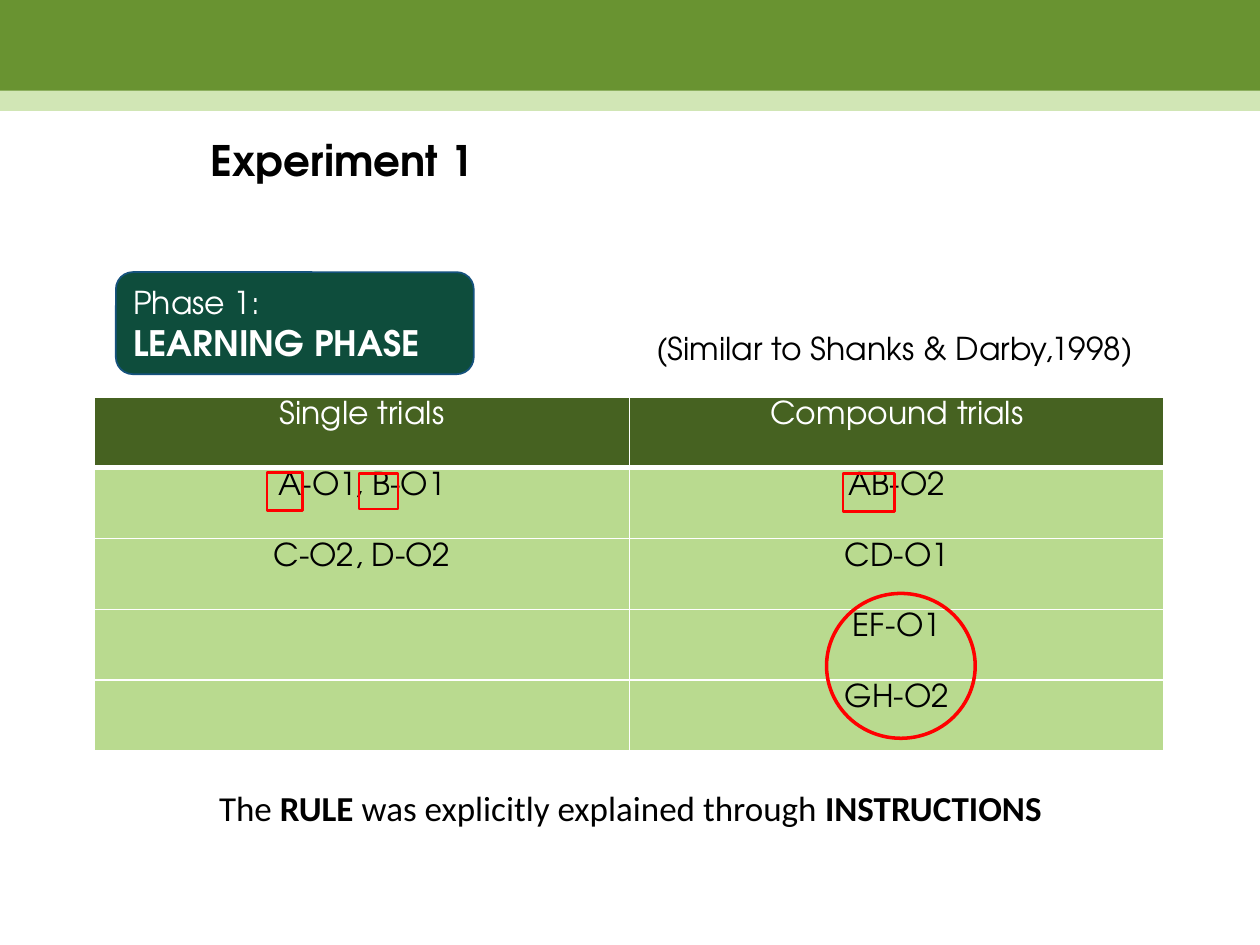
from pptx import Presentation
from pptx.dml.color import RGBColor
from pptx.enum.shapes import MSO_SHAPE
from pptx.enum.text import MSO_ANCHOR, PP_ALIGN
from pptx.oxml import parse_xml
from pptx.oxml.ns import nsdecls
from pptx.util import Inches, Pt

THEME = {
    "face": "TeX Gyre Adventor", "plain": "Calibri",
    "black": "000000", "white": "FFFFFF", "red": "FF0000",
    "band": "699331", "pale": "D1E6B5", "head": "466221", "cell": "B9DA8F",
    "badge": "0E4D3C", "edge": "15527D",
    "title": 24, "large": 20, "body": 18,
}

TITLE = [[("Experiment 1", "title", True)]]
PHASE = [[("Phase 1:", "body", False)], [("LEARNING PHASE", "large", True)]]
SOURCE = [[("(Similar to Shanks & Darby,1998)", "body", False)]]
RULE = [[
    ("The ", "large", False), ("RULE ", "large", True),
    ("was explicitly explained through ", "large", False),
    ("INSTRUCTIONS", "large", True),
]]
TRIALS = [
    ("Single trials", "Compound trials"),
    ("A-O1, B-O1", "AB-O2"),
    ("C-O2, D-O2", "CD-O1"),
    ("", "EF-O1"),
    ("", "GH-O2"),
]
GRID = (0.75, 3.15, 8.49, 2.81)
MARKS = [
    (MSO_SHAPE.RECTANGLE, (2.12, 3.75, 0.28, 0.3), 1.5),
    (MSO_SHAPE.RECTANGLE, (2.85, 3.76, 0.31, 0.28), 1.5),
    (MSO_SHAPE.RECTANGLE, (6.69, 3.76, 0.41, 0.3), 1.5),
    (MSO_SHAPE.OVAL, (6.56, 4.71, 1.18, 1.15), 2),
]
BANDS = [((0, 0, 10, 0.87), "band"), ((0, 0.72, 10, 0.16), "pale")]


def tint(name):
    return RGBColor.from_string(THEME[name])


def apply(item, form):
    for key, value in form.items():
        setattr(item, key, value)


def write(frame, paras, color="black", face="face", align=PP_ALIGN.LEFT, space=1.0):
    for i, runs in enumerate(paras):
        para = frame.add_paragraph() if i else frame.paragraphs[0]
        apply(para, {"alignment": align, "line_spacing": space})
        for text, size, bold in runs:
            run = para.add_run()
            run.text = text
            apply(run.font, {"name": THEME[face], "size": Pt(THEME[size]), "bold": bold})
            run.font.color.rgb = tint(color)


def label(slide, box, paras, anchor, **form):
    frame = slide.shapes.add_textbox(*map(Inches, box)).text_frame
    apply(frame, {"word_wrap": True, "vertical_anchor": anchor})
    write(frame, paras, **form)


def draw(slide, kind, box, fill=None, line=None, width=1):
    shape = slide.shapes.add_shape(kind, *map(Inches, box))
    shape.shadow.inherit = False
    if fill:
        shape.fill.solid()
        shape.fill.fore_color.rgb = tint(fill)
    else:
        shape.fill.background()
    if line:
        shape.line.color.rgb = tint(line)
        shape.line.width = Pt(width)
    else:
        shape.line.fill.background()
    apply(shape.text_frame, {"word_wrap": True, "vertical_anchor": MSO_ANCHOR.MIDDLE})
    return shape


def border(cell, widths):
    for i, (side, width) in enumerate(zip("LRTB", widths)):
        cell._tc.get_or_add_tcPr().insert(i, parse_xml(
            f'<a:ln{side} {nsdecls("a")} w="{Pt(width)}"><a:solidFill>'
            f'<a:srgbClr val="{THEME["white"]}"/></a:solidFill></a:ln{side}>'))


def trials(slide):
    rows, cols = len(TRIALS), len(TRIALS[0])
    table = slide.shapes.add_table(rows, cols, *map(Inches, GRID)).table
    pad = {"margin_left": Inches(0.06), "margin_right": Inches(0.06),
           "margin_top": 0, "margin_bottom": 0}
    for r, texts in enumerate(TRIALS):
        for c, text in enumerate(texts):
            cell = table.cell(r, c)
            apply(cell, pad)
            cell.fill.solid()
            cell.fill.fore_color.rgb = tint("cell" if r else "head")
            border(cell, (1, 1, 3 if r == 1 else 1, 1 if r else 3))
            if text:
                write(cell.text_frame, [[(text, "body", False)]],
                      "black" if r else "white", align=PP_ALIGN.CENTER, space=1.15)


def main():
    deck = Presentation()
    apply(deck, {"slide_width": Inches(10), "slide_height": Inches(7.5)})
    slide = deck.slides.add_slide(deck.slide_layouts[6])
    label(slide, (0, 0.51, 5.43, 1.57), TITLE, MSO_ANCHOR.MIDDLE,
          align=PP_ALIGN.CENTER, space=0.9)
    trials(slide)
    badge = draw(slide, MSO_SHAPE.ROUNDED_RECTANGLE, (0.92, 2.16, 2.84, 0.81),
                 "badge", "edge")
    write(badge.text_frame, PHASE, "white")
    for kind, box, width in MARKS:
        draw(slide, kind, box, line="red", width=width)
    cite = draw(slide, MSO_SHAPE.ROUNDED_RECTANGLE, (5.08, 2.45, 4.14, 0.62), "white")
    write(cite.text_frame, SOURCE)
    for box, fill in BANDS:
        draw(slide, MSO_SHAPE.RECTANGLE, box, fill)
    label(slide, (1.64, 6.19, 8.1, 0.77), RULE, MSO_ANCHOR.TOP, face="plain")
    deck.save("out.pptx")


if __name__ == "__main__":
    main()
